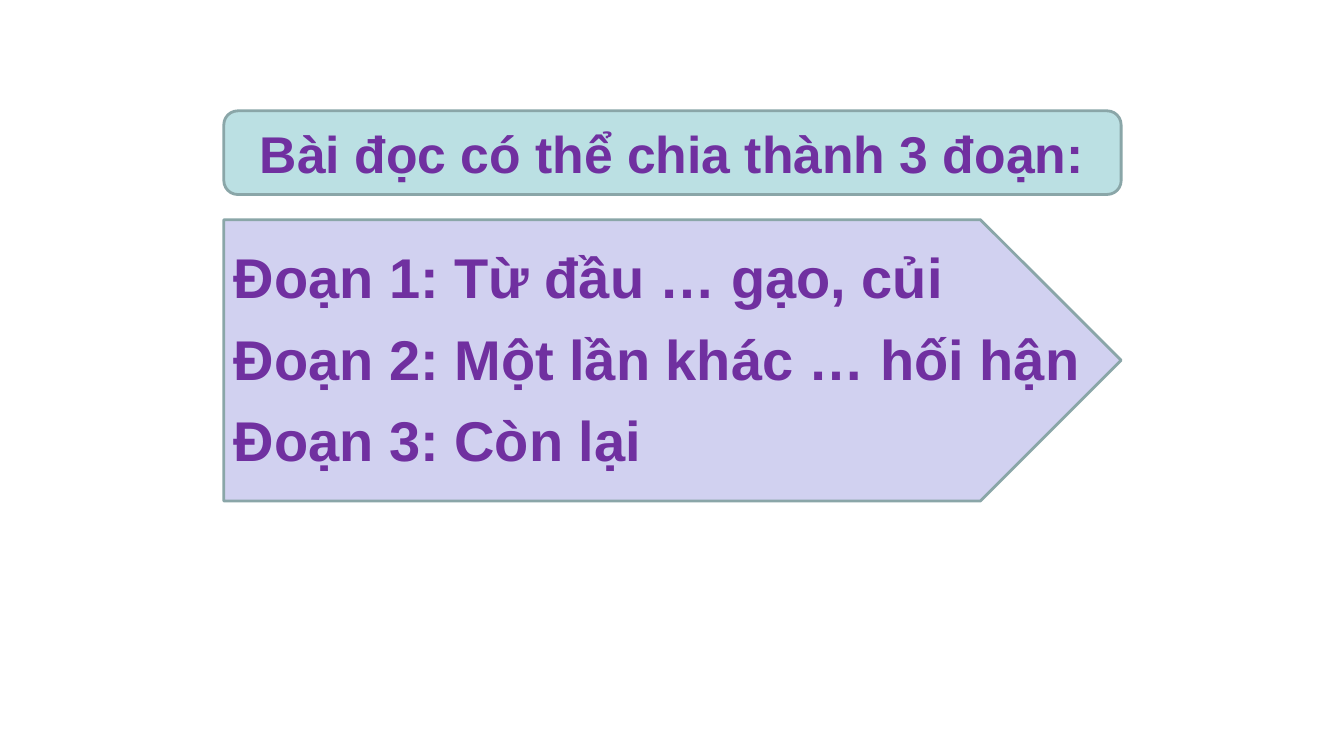
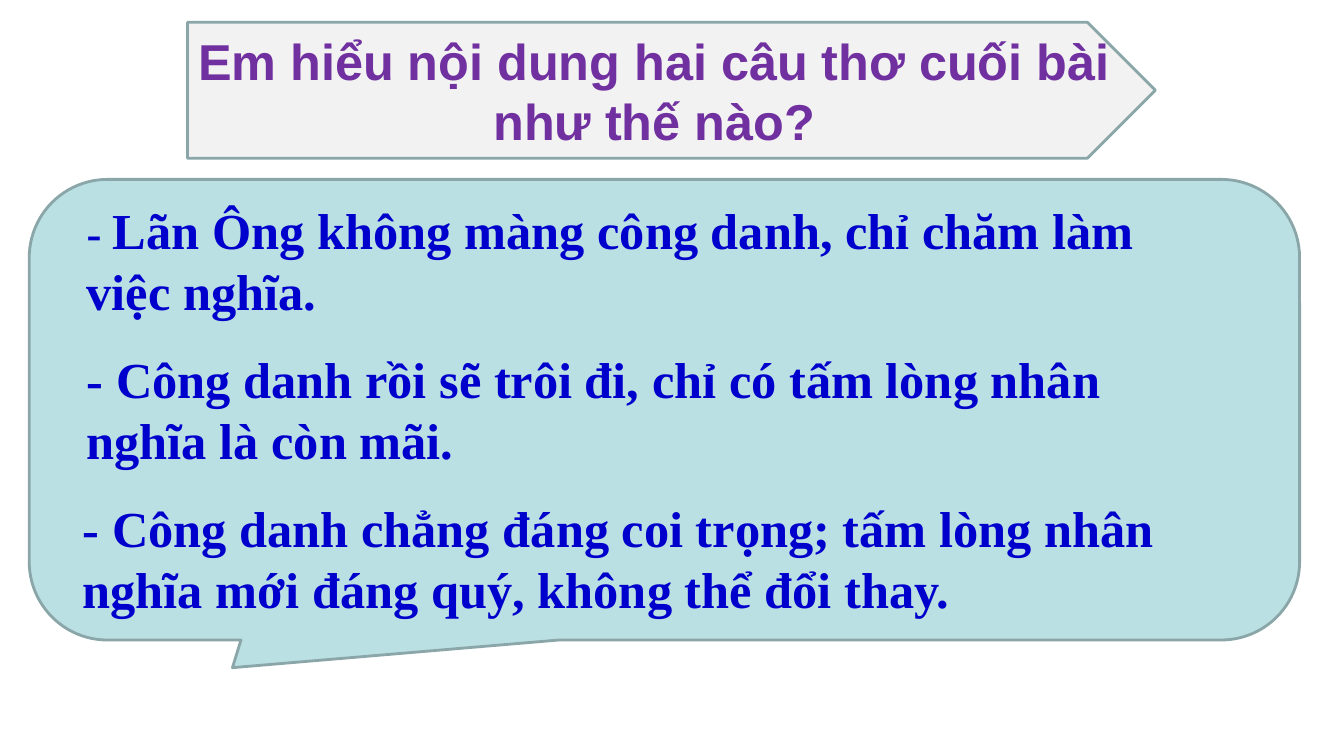
from lxml.etree import SubElement
from pptx import Presentation
from pptx.dml.color import RGBColor
from pptx.enum.shapes import MSO_SHAPE
from pptx.enum.text import MSO_ANCHOR, MSO_AUTO_SIZE, PP_ALIGN
from pptx.oxml.ns import qn
from pptx.util import Pt

PX = 9144
COLORS = {
    "aqua": "BBE0E3",
    "lavender": "D1D1F0",
    "grey": "F2F2F2",
    "outline": "8AA6A8",
    "purple": "7030A0",
    "blue": "0000CC",
}


def color(name):
    """Return the named colour as RGB."""
    return RGBColor.from_string(COLORS[name])


def place(part, box):
    """Move a part to a box given in px."""
    part.left, part.top, part.width, part.height = (n * PX for n in box)


def add_panel(slide, holder, preset, box, fill, adjustments=()):
    """Draw an outlined panel behind the placeholder it carries."""
    panel = slide.shapes.add_shape(preset, *(n * PX for n in box))
    for index, value in enumerate(adjustments):
        panel.adjustments[index] = value
    panel.shadow.inherit = False
    panel.fill.solid()
    panel.fill.fore_color.rgb = color(fill)
    panel.line.color.rgb = color("outline")
    panel.line.width = Pt(2)
    holder.element.addprevious(panel.element)


def prepare_frame(holder, box, anchor, inset):
    """Place a placeholder and return its text frame with fixed size and insets."""
    place(holder, box)
    frame = holder.text_frame
    frame.word_wrap = True
    frame.auto_size = MSO_AUTO_SIZE.NONE
    frame.vertical_anchor = anchor
    frame.margin_left = frame.margin_right = inset * PX
    frame.margin_top = frame.margin_bottom = 5 * PX
    return frame


def style_font(paragraph, name, size, ink):
    """Set the bold font of a paragraph."""
    font = paragraph.font
    font.name, font.size, font.bold = name, Pt(size), True
    font.color.rgb = color(ink)


def add_title(slide, text, box, preset, fill, size, text_width):
    """Write the centred title on its panel."""
    title = slide.shapes.title
    add_panel(slide, title, preset, box, fill)
    left, top, _, height = box
    frame = prepare_frame(title, (left, top, text_width, height), MSO_ANCHOR.MIDDLE, 5)
    heading = frame.paragraphs[0]
    heading.text = text
    heading.alignment = PP_ALIGN.CENTER
    style_font(heading, "Arial", size, "purple")


def add_points(slide, points, box, name, size, ink, gap):
    """Write unbulleted points, each a list of runs with its indent in px."""
    frame = prepare_frame(slide.placeholders[1], box, MSO_ANCHOR.TOP, 10)
    for index, (indent, runs) in enumerate(points):
        point = frame.add_paragraph() if index else frame.paragraphs[0]
        point.alignment = PP_ALIGN.LEFT
        point.space_before = Pt(gap if index else 0)
        properties = point._p.get_or_add_pPr()
        properties.set("marL", str(indent * PX))
        properties.set("indent", "0")
        SubElement(properties, qn("a:buNone"))
        style_font(point, name, size, ink)
        for text, run_size in runs:
            run = point.add_run()
            run.text = text
            if run_size != size:
                run.font.size = Pt(run_size)


def build_sections(slide):
    """Build the slide that divides the reading into three sections."""
    add_title(slide, "Bài đọc có thể chia thành 3 đoạn:", (222, 110, 890, 83),
              MSO_SHAPE.ROUNDED_RECTANGLE, "aqua", 36.9, 890)
    add_panel(slide, slide.placeholders[1], MSO_SHAPE.PENTAGON,
              (222, 218, 890, 279), "lavender", (0.5,))
    sections = ("Từ đầu … gạo, củi", "Một lần khác … hối hận", "Còn lại")
    points = [(0, [(f"Đoạn {number}: {span}", 40)])
              for number, span in enumerate(sections, 1)]
    add_points(slide, points, (222, 236, 902, 243), "Arial", 40, "purple", 10)


def build_meaning(slide):
    """Build the slide that explains the last two lines of the poem."""
    add_title(slide, "Em hiểu nội dung hai câu thơ cuối bài như thế nào?",
              (186, 22, 960, 135), MSO_SHAPE.PENTAGON, "grey", 36, 926)
    add_panel(slide, slide.placeholders[1], MSO_SHAPE.ROUNDED_RECTANGULAR_CALLOUT,
              (29, 178, 1260, 457), "aqua", (-0.34, 0.56, 0.17))
    points = [
        (4, [("- ", 32), ("Lãn Ông không màng công danh, chỉ chăm làm việc nghĩa.", 36)]),
        (4, [("- Công danh rồi sẽ trôi đi, chỉ có tấm lòng nhân nghĩa là còn mãi.", 36)]),
        (0, [("- Công danh chẳng đáng coi trọng; tấm lòng nhân nghĩa mới đáng quý, "
              "không thể đổi thay.", 36)]),
    ]
    add_points(slide, points, (72, 193, 1150, 430), "Times New Roman", 36, "blue", 20)


def main():
    """Build and save the presentation."""
    deck = Presentation()
    deck.slide_width, deck.slide_height = 1333 * PX, 750 * PX
    for build in (build_sections, build_meaning):
        build(deck.slides.add_slide(deck.slide_layouts[1]))
    deck.save("out.pptx")


if __name__ == "__main__":
    main()
